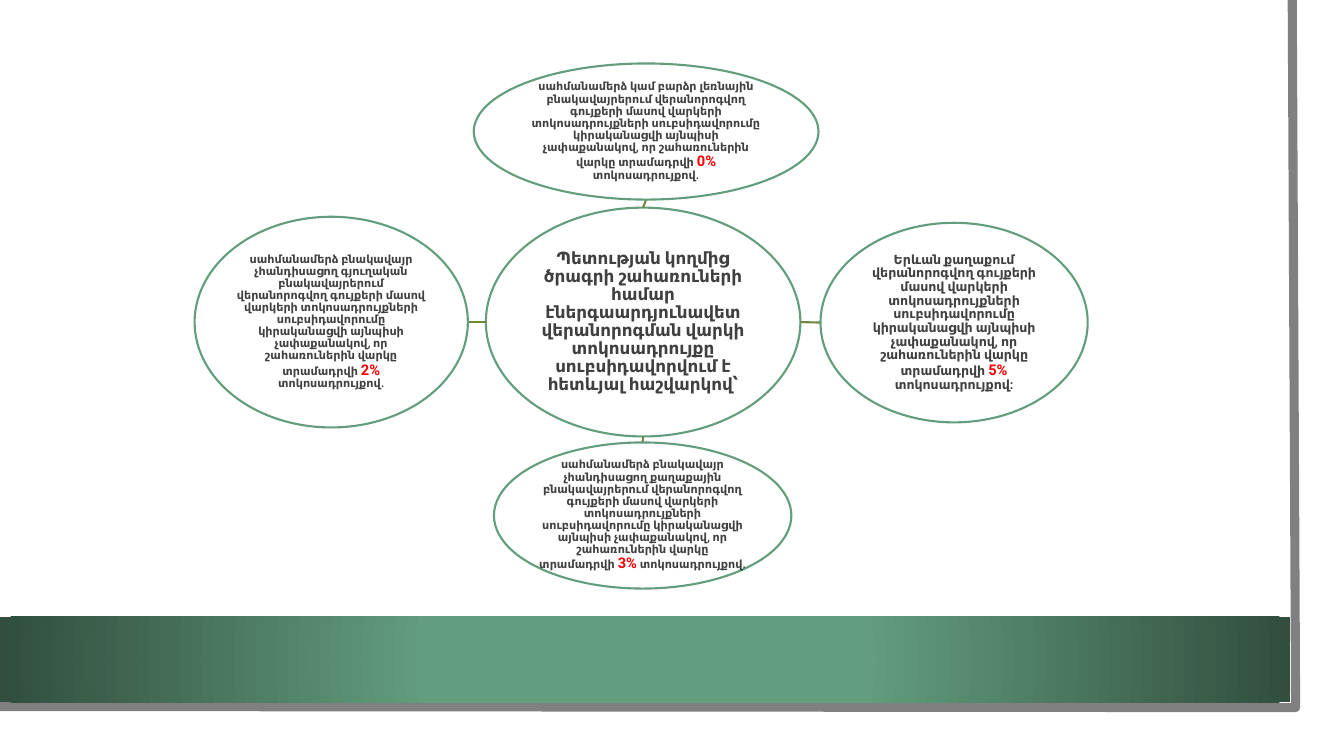
from dataclasses import dataclass
from typing import Any, NamedTuple

from lxml.etree import SubElement as Sub
from pptx import Presentation
from pptx.dml.color import RGBColor as Rgb
from pptx.enum.shapes import MSO_CONNECTOR as Link, MSO_SHAPE as Kind
from pptx.enum.text import MSO_ANCHOR as Anchor, PP_ALIGN as Align
from pptx.oxml import parse_xml
from pptx.oxml.ns import nsdecls, qn
from pptx.util import Inches, Pt


@dataclass(frozen=True)
class Theme:
    white: str = "FFFFFF"
    green: str = "629D7D"
    dark: str = "314E3E"
    olive: str = "738641"
    gray: str = "808080"
    ink: str = "404040"
    red: str = "FF0000"
    face: str = "Roboto"
    slim: str = "Roboto Condensed"
    head: float = 12
    rate: float = 10.5
    large: float = 9
    small: float = 8
    line: float = 1.5
    edge: float = 6.5


class Box(NamedTuple):
    left: float
    top: float
    width: float
    height: float

    def side(self, dx: int, dy: int) -> tuple[int, int]:
        return (across(self.left + self.width * (1 + dx) / 2),
                down(self.top + self.height * (1 + dy) / 2))


class Piece(NamedTuple):
    text: str
    size: float
    color: str
    face: str


class Spoke(NamedTuple):
    box: Box
    way: tuple[int, int]
    words: list[Piece]


THEME = Theme()
DECK = Presentation()
DECK.slide_width, DECK.slide_height = Inches(13.33), Inches(7.5)
SLIDE = DECK.slides.add_slide(DECK.slide_layouts[6])
SHAPES = SLIDE.shapes


def across(share: float) -> int:
    return round(DECK.slide_width * share / 100)


def down(share: float) -> int:
    return round(DECK.slide_height * share / 100)


def apply(item: Any, style: dict[str, Any]) -> None:
    for name, value in style.items():
        setattr(item, name, value)


def stroke(item: Any, color: str, width: float) -> None:
    item.line.color.rgb = Rgb.from_string(color)
    item.line.width = Pt(width)


def shape(kind: Kind, box: Box) -> Any:
    item = SHAPES.add_shape(kind, across(box.left), down(box.top),
                            across(box.width), down(box.height))
    item.shadow.inherit = False
    return item


def edge() -> None:
    start, *rest = [(96.15, 0), (96.4, 93.6), (-0.2, 93.45)]
    form = SHAPES.build_freeform(across(start[0]), down(start[1]))
    form.add_line_segments([(across(x), down(y)) for x, y in rest], close=False)
    item = form.convert_to_shape()
    item.shadow.inherit = False
    item.fill.background()
    stroke(item, THEME.gray, THEME.edge)


def band() -> None:
    item = shape(Kind.RECTANGLE, Box(0, 81.6, 96, 11.33))
    item.line.fill.background()
    stops = "".join(
        f'<a:gs pos="{spot}000"><a:srgbClr val="{color}"/></a:gs>'
        for spot, color in ((34, THEME.green), (100, THEME.dark)))
    fill = parse_xml(
        f'<a:gradFill {nsdecls("a")} rotWithShape="1"><a:gsLst>{stops}</a:gsLst>'
        '<a:path path="circle"><a:fillToRect l="50000" t="50000" r="50000" b="50000"/>'
        '</a:path></a:gradFill>')
    item._element.spPr.find(qn("a:prstGeom")).addnext(fill)


def oval(box: Box, words: list[Piece]) -> None:
    item = shape(Kind.OVAL, box)
    item.fill.solid()
    item.fill.fore_color.rgb = Rgb.from_string(THEME.white)
    stroke(item, THEME.green, THEME.line)
    frame = item.text_frame
    pad = Inches(0.01)
    apply(frame, {"word_wrap": True, "vertical_anchor": Anchor.MIDDLE,
                  "margin_left": pad, "margin_right": pad,
                  "margin_top": pad, "margin_bottom": pad})
    para = frame.paragraphs[0]
    apply(para, {"alignment": Align.CENTER, "line_spacing": 0.9})
    for piece in words:
        run = para.add_run()
        run.text = piece.text
        apply(run.font, {"size": Pt(piece.size), "name": piece.face, "bold": True})
        run.font.color.rgb = Rgb.from_string(piece.color)


def link(hub: Box, spoke: Spoke) -> None:
    dx, dy = spoke.way
    item = SHAPES.add_connector(Link.STRAIGHT, *hub.side(dx, dy),
                                *spoke.box.side(-dx, -dy))
    stroke(item, THEME.olive, THEME.line)
    Sub(item._element.spPr, qn("a:effectLst"))


def plain(text: str, size: float, face: str = THEME.face) -> Piece:
    return Piece(text, size, THEME.ink, face)


def terms(place: str, rate: str, end: str, size: float = THEME.small) -> list[Piece]:
    body = (f"{place} վերանորոգվող գույքերի մասով վարկերի տոկոսադրույքների "
            "սուբսիդավորումը կիրականացվի այնպիսի չափաքանակով, որ շահառուներին "
            "վարկը տրամադրվի ")
    return [plain(body, size), Piece(rate, THEME.rate, THEME.red, THEME.face),
            plain(f" տոկոսադրույքով{end}", size)]


HUB = Box(36.15, 27.47, 23.4, 30.27)
LEAD = ("Պետության կողմից ծրագրի շահառուների համար էներգաարդյունավետ "
        "վերանորոգման վարկի տոկոսադրույքը սուբսիդավորվում է հետևյալ հաշվարկով՝")
RURAL = "սահմանամերձ բնակավայր չհանդիսացող գյուղական բնակավայրերում"
URBAN = "սահմանամերձ բնակավայր չհանդիսացող քաղաքային բնակավայրերում"
HIGH = "սահմանամերձ կամ բարձր լեռնային բնակավայրերում"
SPOKES = [
    Spoke(Box(35.25, 8.4, 25.65, 18), (0, -1),
          terms(HIGH, "0%", "") + [plain(".", THEME.small, THEME.slim)]),
    Spoke(Box(61.05, 29.47, 19.88, 26.4), (1, 0),
          terms("Երևան քաղաքում", "5%", ":", THEME.large)),
    Spoke(Box(36.75, 58.53, 22.13, 19.33), (0, 1), terms(URBAN, "3%", ".")),
    Spoke(Box(14.48, 28.67, 20.33, 27.87), (-1, 0), terms(RURAL, "2%", ".")),
]


def main() -> None:
    edge()
    band()
    oval(HUB, [plain(LEAD, THEME.head)])
    for spoke in SPOKES:
        link(HUB, spoke)
        oval(spoke.box, spoke.words)
    DECK.save("out.pptx")


if __name__ == "__main__":
    main()
